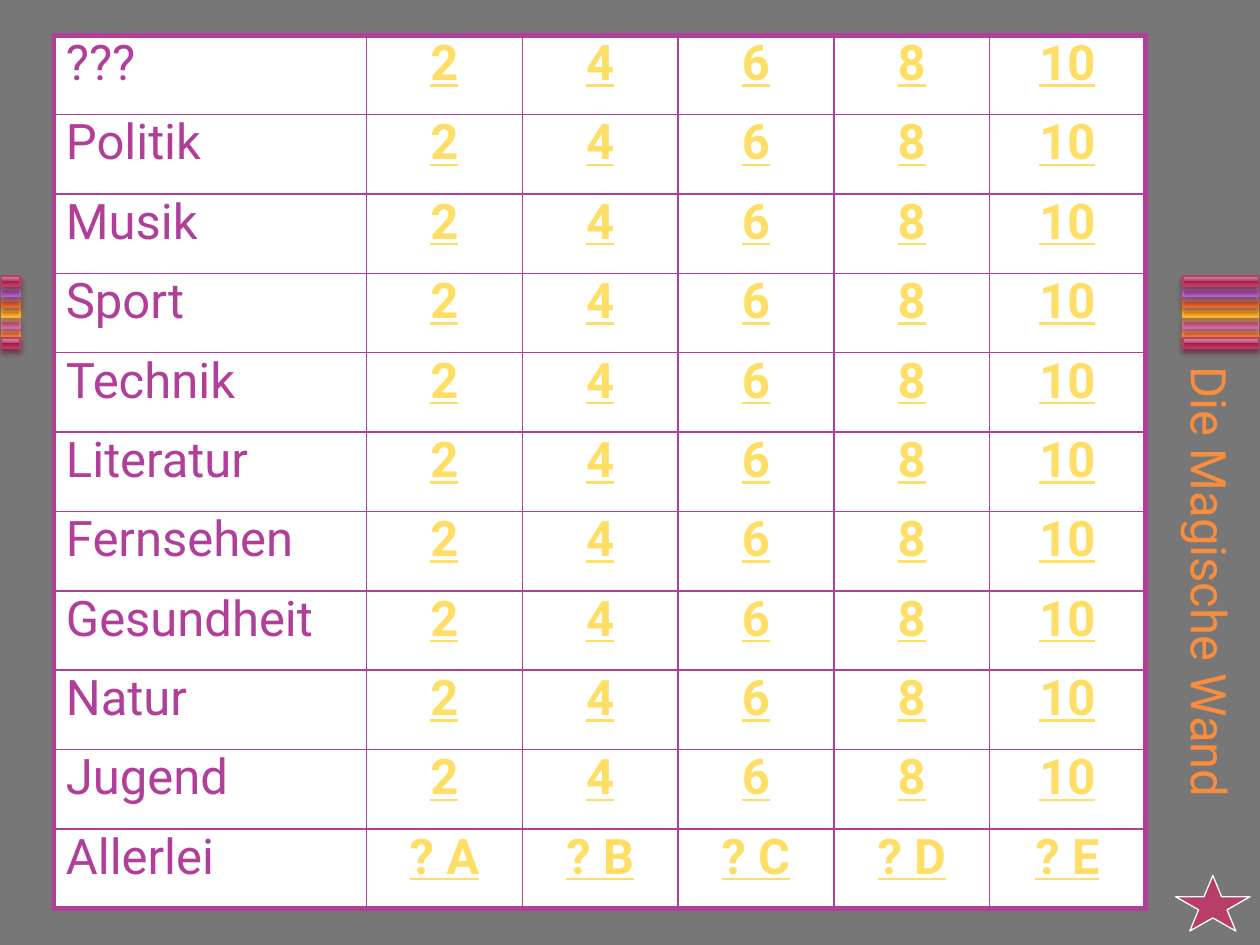
from dataclasses import dataclass

from pptx import Presentation
from pptx.dml.color import RGBColor
from pptx.enum.shapes import MSO_SHAPE as Preset
from pptx.enum.text import MSO_ANCHOR as Anchor, MSO_AUTO_SIZE as AutoSize, PP_ALIGN as Align
from pptx.oxml.ns import qn
from pptx.oxml.xmlchemy import OxmlElement
from pptx.util import Cm, Pt


@dataclass(frozen=True)
class Stripe:
    line: str
    shadow: str
    stops: tuple


@dataclass(frozen=True)
class Theme:
    font: str = "Roboto"
    size: float = 28
    background: str = "777777"
    cell: str = "FFFFFF"
    topic: str = "B13F9A"
    points: str = "FFDE66"
    title: str = "FA8D3D"
    star: str = "B83D68"
    star_line: str = "FFFFFF"
    thin: float = 1
    thick: float = 3


THEME = Theme()
STOP_POSITIONS = (0, 49, 49, 92, 100)
CRIMSON = Stripe("B83D68", "722640", ("CE94A2", "B34869", "A61749", "C13764", "CA5D7C"))
PURPLE = Stripe("AC66BB", "6A3F73", ("C6A2D0", "A666B4", "8F3EA1", "AD5DBF", "BA76CA"))
RUST = Stripe("DE6C36", "894321", ("E7A493", "D66B42", "CC4809", "E9642C", "F07B55"))
AMBER = Stripe("F9B639", "9A7023", ("FBCC93", "EFAE43", "E59807", "FFB432", "FFBE5F"))
PINK = Stripe("CF6DA4", "804365", ("DDA4C1", "C66B9D", "B34181", "D361A0", "DC79AE"))
ORANGE = Stripe("FA8D3D", "9A5726", ("FBB494", "F08745", "E5670B", "FF8736", "FF9961"))

# Stripes by row from the top; the upper ones overlap those below, the last closes the band
STRIPES = (CRIMSON, PURPLE, RUST, AMBER, PINK, ORANGE, CRIMSON)
DRAW_ORDER = (5, 4, 3, 2, 1, 0, 6)
STRIPE_HEIGHT = 0.21

TOPICS = ("???", "Politik", "Musik", "Sport", "Technik", "Literatur",
          "Fernsehen", "Gesundheit", "Natur", "Jugend")
POINTS = ("2", "4", "6", "8", "10")
MIXED_ROW = ("Allerlei", "? A", "? B", "? C", "? D", "? E")


def add_xml(parent, tag, **attributes):
    element = OxmlElement(tag)
    for name, value in attributes.items():
        element.set(name, str(value))
    parent.append(element)
    return element


def add_span(para, text, color, strong=False):
    span = para.add_run()
    span.text = text
    font = span.font
    font.name, font.size = THEME.font, Pt(THEME.size)
    font.color.rgb = RGBColor.from_string(color)
    font.bold = font.underline = strong


def set_line(shape, color, width):
    shape.line.color.rgb = RGBColor.from_string(color)
    shape.line.width = Pt(width)


def add_stripe(group, stripe, left, top, width):
    box = group.shapes.add_shape(Preset.RECTANGLE, Cm(left), Cm(top), Cm(width), Cm(STRIPE_HEIGHT))
    set_line(box, stripe.line, 0.9)
    # Glossy gradient from top to bottom
    box.fill.gradient()
    box.fill.gradient_angle = 270
    properties = box.element.spPr
    stop_list = properties.find(qn("a:gradFill")).find(qn("a:gsLst"))
    for old_stop in list(stop_list):
        stop_list.remove(old_stop)
    for position, color in zip(STOP_POSITIONS, stripe.stops):
        stop = add_xml(stop_list, "a:gs", pos=position * 1000)
        add_xml(stop, "a:srgbClr", val=color)
    # Soft shadow below
    box.shadow.inherit = False
    shadow = add_xml(properties.find(qn("a:effectLst")), "a:outerShdw", blurRad=Pt(3.1),
                     dist=Pt(2), dir=5400000, rotWithShape=0)
    color = add_xml(shadow, "a:srgbClr", val=stripe.shadow)
    add_xml(color, "a:alpha", val=83000)


def add_band(page, left, width, top=5.56):
    group = page.shapes.add_group_shape()
    for row in DRAW_ORDER:
        add_stripe(group, STRIPES[row], left, top + row * STRIPE_HEIGHT, width)


def set_title(page, text):
    box = page.shapes.title
    box.left, box.top, box.width, box.height = Cm(18.54), Cm(12.27), Cm(11.71), Cm(1.45)
    box.rotation = 90
    frame = box.text_frame
    frame.word_wrap = True
    frame.auto_size = AutoSize.SHAPE_TO_FIT_TEXT
    frame.vertical_anchor = Anchor.TOP
    para = frame.paragraphs[0]
    para.alignment = Align.LEFT
    add_span(para, text, THEME.title)


def set_borders(cell, widths):
    properties = cell._tc.get_or_add_tcPr()
    for index, (side, width) in enumerate(zip("LRTB", widths)):
        line = OxmlElement(f"a:ln{side}")
        line.set("w", str(Pt(width)))
        add_xml(add_xml(line, "a:solidFill"), "a:srgbClr", val=THEME.topic)
        properties.insert(index, line)


def fill_cell(cell, text, is_topic):
    cell.fill.solid()
    cell.fill.fore_color.rgb = RGBColor.from_string(THEME.cell)
    cell.margin_left = Cm(0.24 if is_topic else 0)
    cell.margin_right = cell.margin_top = cell.margin_bottom = 0
    para = cell.text_frame.paragraphs[0]
    para.alignment = Align.LEFT if is_topic else Align.CENTER
    add_span(para, text, THEME.topic if is_topic else THEME.points, strong=not is_topic)


def add_board(page, rows):
    widths = [6.3] + [3.14] * len(POINTS)
    row_height = 1.6
    table = page.shapes.add_table(len(rows), len(widths), Cm(1.09), Cm(0.71),
                                  Cm(sum(widths)), Cm(row_height * len(rows))).table
    table.first_row = table.horz_banding = False
    for column, width in zip(table.columns, widths):
        column.width = Cm(width)
    last_row, last_column = len(rows) - 1, len(widths) - 1
    for r, texts in enumerate(rows):
        table.rows[r].height = Cm(row_height)
        for c, text in enumerate(texts):
            cell = table.cell(r, c)
            fill_cell(cell, text, is_topic=c == 0)
            outer = (c == 0, c == last_column, r == 0, r == last_row)
            set_borders(cell, [THEME.thick if edge else THEME.thin for edge in outer])


def add_star(page):
    star = page.shapes.add_shape(Preset.STAR_5_POINT, Cm(23.7), Cm(17.65), Cm(1.5), Cm(1.12))
    star.shadow.inherit = False
    star.fill.solid()
    star.fill.fore_color.rgb = RGBColor.from_string(THEME.star)
    set_line(star, THEME.star_line, 0.75)


def main():
    deck = Presentation()
    deck.slide_width, deck.slide_height = Cm(25.4), Cm(19.05)
    page = deck.slides.add_slide(deck.slide_layouts[5])
    page.background.fill.solid()
    page.background.fill.fore_color.rgb = RGBColor.from_string(THEME.background)

    # Striped bands at both edges
    add_band(page, left=0.03, width=0.38)
    add_band(page, left=23.85, width=1.52)

    # Title, game board and star
    set_title(page, "Die Magische Wand")
    add_board(page, [(topic, *POINTS) for topic in TOPICS] + [MIXED_ROW])
    add_star(page)

    deck.save("out.pptx")


if __name__ == "__main__":
    main()
